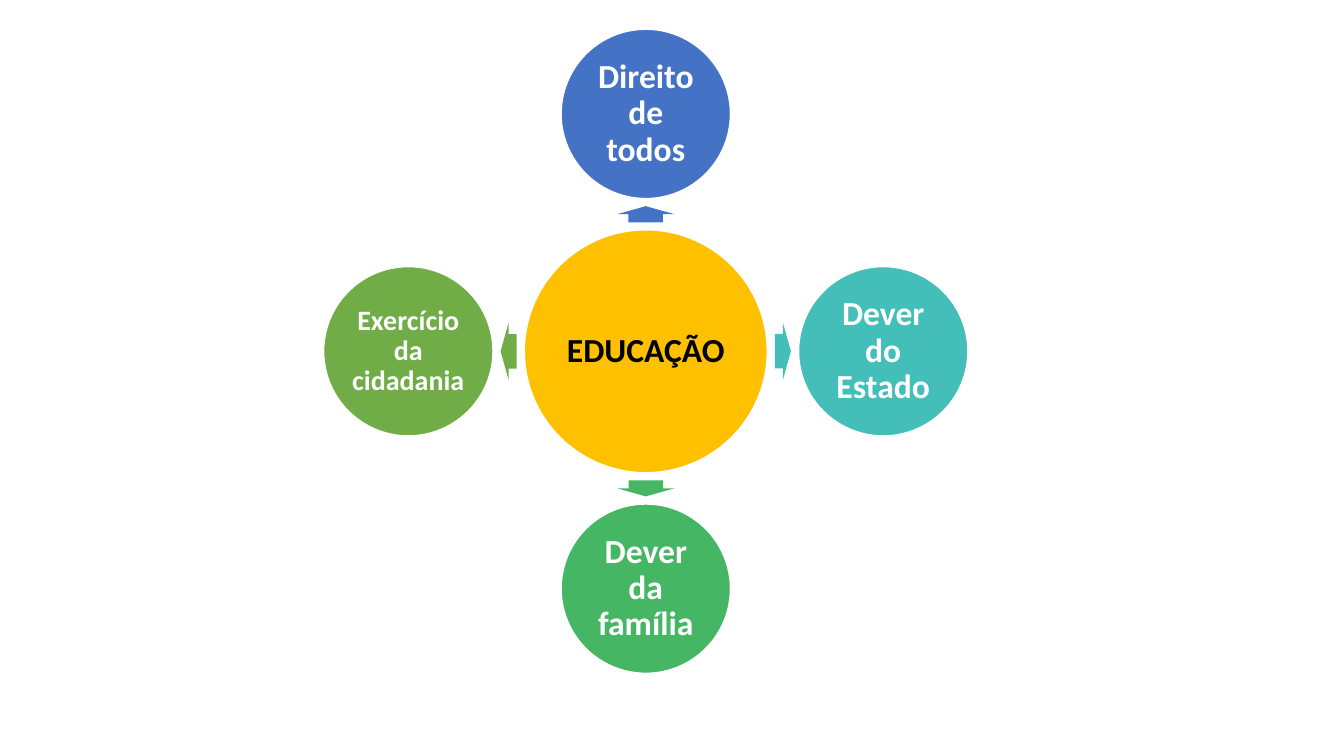
from math import cos, sin, radians
from pptx import Presentation
from pptx.dml.color import RGBColor
from pptx.enum.shapes import MSO_SHAPE as SHAPE
from pptx.enum.text import MSO_ANCHOR as ANCHOR, PP_ALIGN as ALIGN
from pptx.util import Inches, Pt

COLORS = {
    "white": "FFFFFF", "black": "000000", "gold": "FFC000", "blue": "4472C4",
    "teal": "43BEB9", "green": "45B664", "olive": "70AD47",
}
HUB = 2.41            # diameter of the central circle
NODE = 1.68           # diameter of the outer circles
ARROW = (0.16, 0.57)  # length and width of an arrow

# Text, colour, text size, direction in degrees clockwise from the right
NODES = [
    ("Direito de todos", "blue", 24, 270),
    ("Dever do Estado", "teal", 24, 0),
    ("Dever da família", "green", 24, 90),
    ("Exercício da cidadania", "olive", 20, 180),
]


def color(name):
    return RGBColor.from_string(COLORS[name])


def write(shape, text, size=24, tone="white", bold=True, font="Calibri"):
    frame = shape.text_frame
    frame.word_wrap = True
    frame.vertical_anchor = ANCHOR.MIDDLE
    frame.margin_left = frame.margin_right = Inches(0.03)
    frame.margin_top = frame.margin_bottom = Inches(0.03)
    para = frame.paragraphs[0]
    para.alignment = ALIGN.CENTER
    para.line_spacing = 0.9
    run = para.add_run()
    run.text = text
    run.font.name, run.font.size, run.font.bold = font, Pt(size), bold
    run.font.color.rgb = color(tone)


def draw(slide, kind, x, y, wide, high, fill):
    """Add a filled shape centred on x, y."""
    shape = slide.shapes.add_shape(kind, Inches(x - wide / 2), Inches(y - high / 2),
                                   Inches(wide), Inches(high))
    shape.shadow.inherit = False
    shape.fill.solid()
    shape.fill.fore_color.rgb = color(fill)
    shape.line.fill.background()
    return shape


def circle(slide, x, y, width, fill, text, **style):
    disc = draw(slide, SHAPE.OVAL, x, y, width, width, fill)
    disc.line.color.rgb = color("white")
    disc.line.width = Pt(1)
    write(disc, text, **style)


def arrow(slide, x, y, fill, angle):
    shape = draw(slide, SHAPE.RIGHT_ARROW, x, y, *ARROW, fill)
    shape.adjustments[0], shape.adjustments[1] = 0.6, 0.5
    shape.rotation = angle


def radial(slide, left, top, size):
    """Place the hub and its four nodes in a square box."""
    x, y = left + size / 2, top + size / 2
    reach = (size - NODE) / 2
    mid = (HUB / 2 + reach - NODE / 2) / 2

    # Centre
    circle(slide, x, y, HUB, "gold", "EDUCAÇÃO", tone="black")

    # Arrows and outer circles
    for text, fill, pts, angle in NODES:
        dx, dy = cos(radians(angle)), sin(radians(angle))
        arrow(slide, x + mid * dx, y + mid * dy, fill, angle)
        circle(slide, x + reach * dx, y + reach * dy, NODE, fill, text, size=pts)


def main():
    deck = Presentation()
    deck.slide_width, deck.slide_height = Inches(13.33), Inches(7.5)
    slide = deck.slides.add_slide(deck.slide_layouts[6])
    radial(slide, 3.21, 0.29, 6.39)
    deck.save("out.pptx")


if __name__ == "__main__":
    main()
